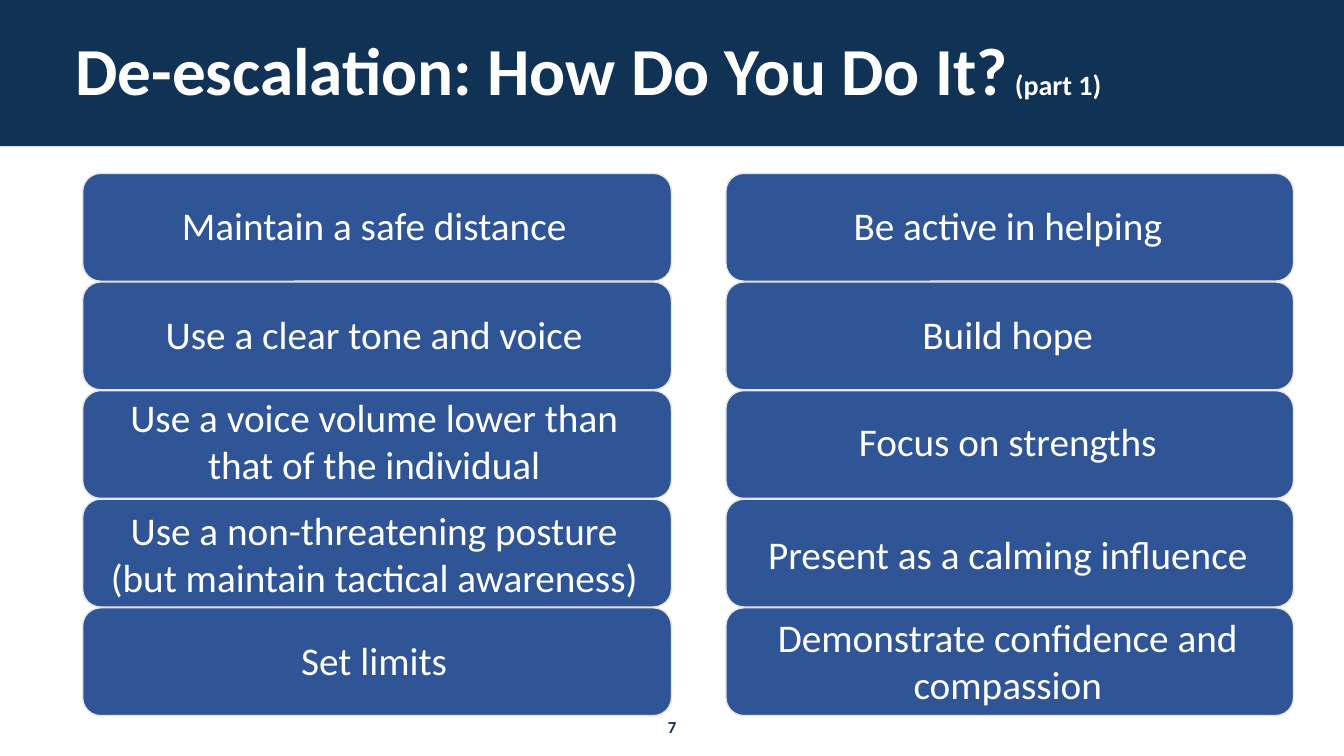
from dataclasses import dataclass

from pptx import Presentation
from pptx.dml.color import RGBColor
from pptx.enum.shapes import MSO_SHAPE
from pptx.enum.text import MSO_ANCHOR, PP_ALIGN
from pptx.slide import Slide
from pptx.util import Inches, Pt

COLORS = {
    "navy": "103255",
    "blue": "2F5597",
    "border": "E7E6E6",
    "white": "FFFFFF",
}
FONT = "Calibri"
CARD_TOP, CARD_HEIGHT, CARD_STEP = 1.72, 1.07, 1.0775
CAPTION_TOPS = (1.85, 2.93, 3.99, 5.11, 6.17)
CAPTION_HEIGHT = 0.76


@dataclass(frozen=True)
class Frame:
    left: float
    top: float
    width: float
    height: float

    def lengths(self) -> tuple[Inches, ...]:
        return tuple(Inches(n) for n in (self.left, self.top, self.width, self.height))


@dataclass(frozen=True)
class Span:
    text: str
    size: int
    color: str = "white"
    bold: bool = False


@dataclass(frozen=True)
class Column:
    card_left: float
    card_width: float
    caption_left: float
    caption_width: float
    captions: tuple[str, ...]


COLUMNS = (
    Column(0.82, 5.84, 0.87, 5.68, (
        "Maintain a safe distance",
        "Use a clear tone and voice",
        "Use a voice volume lower than that of the individual",
        "Use a non-threatening posture (but maintain tactical awareness)",
        "Set limits",
    )),
    Column(7.2, 5.63, 7.23, 5.53, (
        "Be active in helping",
        "Build hope",
        "Focus on strengths",
        "Present as a calming influence",
        "Demonstrate confidence and compassion",
    )),
)


def rgb(name: str) -> RGBColor:
    return RGBColor.from_string(COLORS[name])


def add_panel(page: Slide, kind: MSO_SHAPE, frame: Frame, fill: str,
              border: str | None = None) -> None:
    panel = page.shapes.add_shape(kind, *frame.lengths())
    panel.shadow.inherit = False
    panel.fill.solid()
    panel.fill.fore_color.rgb = rgb(fill)
    if border:
        panel.line.color.rgb = rgb(border)
        panel.line.width = Pt(1)
    else:
        panel.line.fill.background()


def add_text(page: Slide, frame: Frame, spans: list[Span],
             align: PP_ALIGN = PP_ALIGN.CENTER,
             anchor: MSO_ANCHOR = MSO_ANCHOR.MIDDLE,
             line_spacing: float = 1.0) -> None:
    box = page.shapes.add_textbox(*frame.lengths())
    box.text_frame.word_wrap = True
    box.text_frame.vertical_anchor = anchor
    para = box.text_frame.paragraphs[0]
    para.alignment = align
    para.line_spacing = line_spacing
    for span in spans:
        run = para.add_run()
        run.text = span.text
        run.font.name = FONT
        run.font.size = Pt(span.size)
        run.font.bold = span.bold
        run.font.color.rgb = rgb(span.color)


def add_column(page: Slide, column: Column) -> None:
    for row in range(len(column.captions)):
        card = Frame(column.card_left, CARD_TOP + row * CARD_STEP,
                     column.card_width, CARD_HEIGHT)
        add_panel(page, MSO_SHAPE.ROUNDED_RECTANGLE, card, "blue", "border")
    for top, caption in zip(CAPTION_TOPS, column.captions):
        frame = Frame(column.caption_left, top, column.caption_width, CAPTION_HEIGHT)
        add_text(page, frame, [Span(caption, 28)])


def main() -> None:
    deck = Presentation()
    deck.slide_width, deck.slide_height = Inches(13.33), Inches(7.5)
    page = deck.slides.add_slide(deck.slide_layouts[6])

    # Header band, page number and title
    add_panel(page, MSO_SHAPE.RECTANGLE, Frame(0, 0, 13.33, 1.45), "navy")
    add_text(page, Frame(6.09, 7.06, 1.15, 0.3), [Span("7", 12, "navy", True)],
             anchor=MSO_ANCHOR.TOP)
    add_text(page, Frame(0.65, 0.4, 12.04, 0.67),
             [Span("De-escalation: How Do You Do It?", 48, bold=True),
              Span(" (part 1)", 20, bold=True)],
             align=PP_ALIGN.LEFT, line_spacing=0.9)

    # Two columns of advice cards
    for column in COLUMNS:
        add_column(page, column)

    deck.save("out.pptx")


if __name__ == "__main__":
    main()
